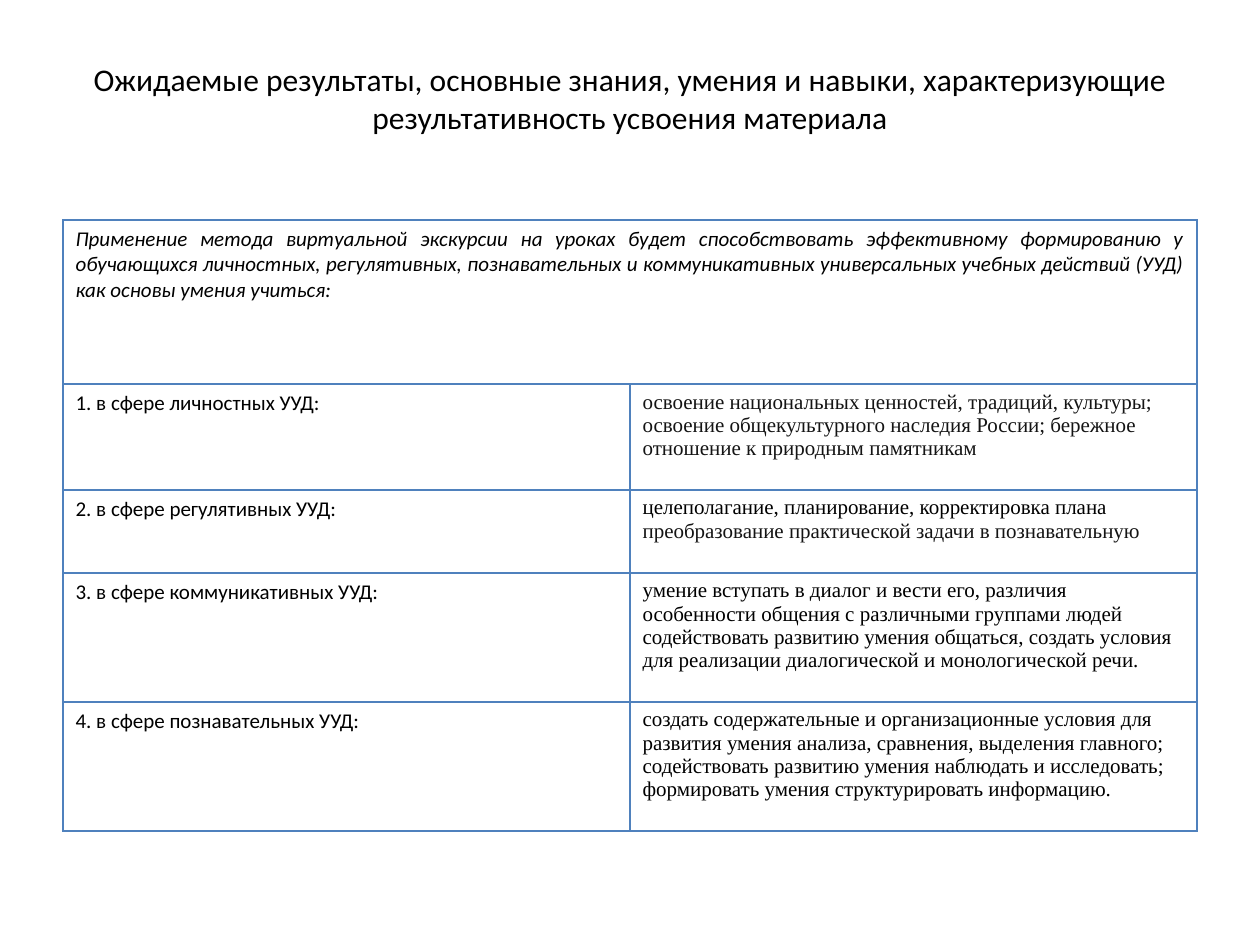
import pptx
import pptx.util
import pptx.dml.color
import pptx.enum.text
from lxml import etree
from pptx.oxml.ns import qn

COLORS = {"text": "000000", "soft": "141414", "border": "4F81BD", "cell": "FFFFFF"}
HEADING_FONT, BODY_FONT = "Calibri", "Times New Roman"
ALIGN = pptx.enum.text.PP_ALIGN
ANCHOR = pptx.enum.text.MSO_ANCHOR


def px(length):
    return pptx.util.Emu(round(length * 914400 / 126))


class SlideBuilder:
    def __init__(self, slide):
        self.slide = slide

    def add_text(self, frame, runs, font, size, align=ALIGN.LEFT, italic=False):
        """Fill a frame with one paragraph of (text, color name) runs."""
        paragraph = frame.paragraphs[0]
        paragraph.alignment = align
        for text, color in runs:
            run = paragraph.add_run()
            run.text = text
            run.font.name = font
            run.font.size = pptx.util.Pt(size)
            run.font.italic = italic
            run.font.color.rgb = pptx.dml.color.RGBColor.from_string(COLORS[color])

    def title(self, text, left, top, width, height, bottom_inset):
        box = self.slide.shapes.add_textbox(px(left), px(top), px(width), px(height))
        frame = box.text_frame
        frame.word_wrap = True
        frame.vertical_anchor = ANCHOR.MIDDLE
        frame.margin_bottom = px(bottom_inset)
        self.add_text(frame, [(text, "text")], HEADING_FONT, 18, ALIGN.CENTER)

    def table(self, left, top, column_width, columns, row_heights):
        frame = self.slide.shapes.add_table(
            len(row_heights), columns, px(left), px(top),
            px(column_width * columns), px(sum(row_heights)))
        table = frame.table
        table.first_row = table.horz_banding = False
        for column in table.columns:
            column.width = px(column_width)
        for row, height in zip(table.rows, row_heights):
            row.height = px(height)
            for cell in row.cells:
                self.style_cell(cell)
        return table

    def style_cell(self, cell):
        properties = cell._tc.get_or_add_tcPr()
        for side in ("a:lnL", "a:lnR", "a:lnT", "a:lnB"):
            line = etree.SubElement(properties, qn(side), w=str(int(pptx.util.Pt(1))))
            fill = etree.SubElement(line, qn("a:solidFill"))
            etree.SubElement(fill, qn("a:srgbClr"), val=COLORS["border"])
        cell.fill.solid()
        cell.fill.fore_color.rgb = pptx.dml.color.RGBColor.from_string(COLORS["cell"])


INTRO = ("Применение метода виртуальной экскурсии на уроках будет способствовать "
         "эффективному формированию у обучающихся личностных, регулятивных, "
         "познавательных и коммуникативных универсальных учебных действий (УУД) "
         "как основы умения учиться:")

# Skill area, row height, expected results
SKILLS = [
    ("личностных", 106, [
        ("освоение национальных ценностей, традиций, культуры; освоение "
         "общекультурного наследия России; бережное отношение к природным "
         "памятникам", "soft")]),
    ("регулятивных", 83, [
        ("целеполагание, планирование, корректировка плана ", "text"),
        ("преобразование практической задачи в познавательную", "soft")]),
    ("коммуникативных", 129, [
        ("умение вступать в диалог и вести его, различия особенности общения с "
         "различными группами людей содействовать развитию умения общаться, "
         "создать условия для реализации диалогической и монологической речи.",
         "text")]),
    ("познавательных", 129, [
        ("создать содержательные и организационные условия для развития умения "
         "анализа, сравнения, выделения главного; содействовать развитию умения "
         "наблюдать и исследовать; формировать умения структурировать "
         "информацию.", "text")]),
]


def main():
    presentation = pptx.Presentation()
    presentation.slide_width, presentation.slide_height = px(1260), px(945)
    builder = SlideBuilder(presentation.slides.add_slide(presentation.slide_layouts[6]))

    # Title
    builder.title("Ожидаемые результаты, основные знания, умения и навыки, "
                  "характеризующие результативность усвоения материала",
                  63, 38, 1134, 157, bottom_inset=44)

    # Table with the introduction across both columns
    heights = [164] + [height for _, height, _ in SKILLS]
    results = builder.table(63, 220, 567, 2, heights)
    intro = results.cell(0, 0)
    intro.merge(results.cell(0, 1))
    builder.add_text(intro.text_frame, [(INTRO, "text")], HEADING_FONT, 12,
                     ALIGN.JUSTIFY, italic=True)

    # One row for each skill area
    for number, (area, _, outcomes) in enumerate(SKILLS, start=1):
        builder.add_text(results.cell(number, 0).text_frame,
                         [(f"{number}. в сфере {area} УУД:", "text")], HEADING_FONT, 12)
        builder.add_text(results.cell(number, 1).text_frame, outcomes, BODY_FONT, 12)

    presentation.save("out.pptx")


if __name__ == "__main__":
    main()
